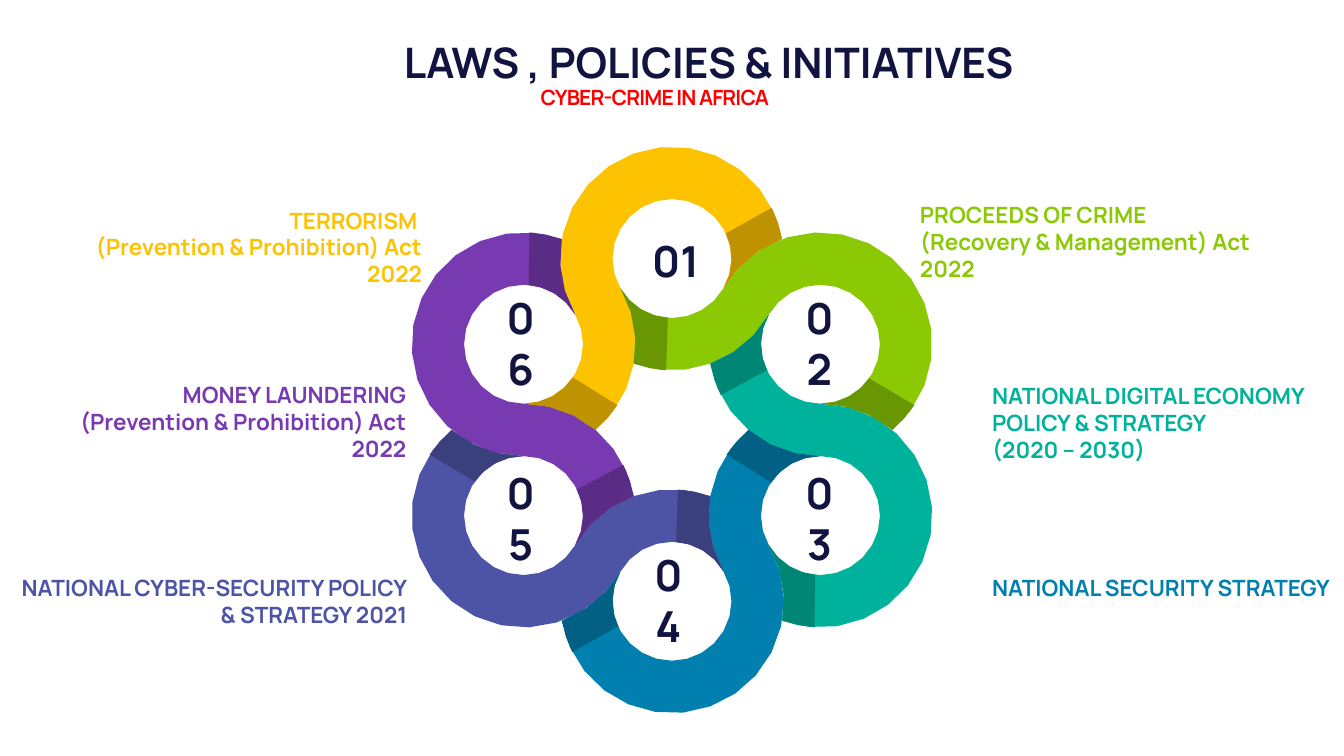
import math
import pptx
import pptx.util
from pptx.dml.color import RGBColor
from pptx.enum.text import MSO_ANCHOR, MSO_AUTO_SIZE, PP_ALIGN

WIDTH, HEIGHT = 26.66, 15
FONT = "Manrope"
NAVY = RGBColor(0x11, 0x13, 0x40)
RED = RGBColor(0xFF, 0x00, 0x00)
YELLOW = RGBColor(0xFD, 0xC3, 0x00)
GREEN = RGBColor(0x8B, 0xC9, 0x04)
TEAL = RGBColor(0x00, 0xB2, 0x9C)
BLUE = RGBColor(0x01, 0x80, 0xB0)
INDIGO = RGBColor(0x4D, 0x54, 0xA6)
PURPLE = RGBColor(0x78, 0x3A, 0xB1)

HEADING = "LAWS , POLICIES & INITIATIVES"
SUBHEADING = "CYBER-CRIME IN AFRICA"

# Clockwise from the top: number, colour, offset of the number from its ring centre
RINGS = [
    ("01", YELLOW, (0.07, 0.04)),
    ("02", GREEN, (-0.02, -0.02)),
    ("03", TEAL, (-0.02, 0.05)),
    ("04", BLUE, (-0.07, -0.02)),
    ("05", INDIGO, (-0.06, 0.05)),
    ("06", PURPLE, (-0.06, -0.02)),
]

# Lines, colour, alignment, box (left, top, width, height)
LAWS = [
    (["TERRORISM ", "(Prevention & Prohibition) Act 2022"],
     YELLOW, PP_ALIGN.RIGHT, (0.63, 4.05, 7.84, 1.18)),
    (["MONEY LAUNDERING", "(Prevention & Prohibition) Act 2022"],
     PURPLE, PP_ALIGN.RIGHT, (0.32, 7.51, 7.84, 1.18)),
    (["NATIONAL CYBER-SECURITY POLICY", "& STRATEGY 2021"],
     INDIGO, PP_ALIGN.RIGHT, (0.26, 11.35, 7.92, 1.18)),
    (["PROCEEDS OF CRIME", "(Recovery & Management) Act 2022"],
     GREEN, PP_ALIGN.LEFT, (18.15, 3.94, 7.9, 1.18)),
    (["NATIONAL DIGITAL ECONOMY", "POLICY & STRATEGY", "(2020 – 2030)"],
     TEAL, PP_ALIGN.LEFT, (19.58, 7.53, 6.76, 1.72)),
    (["NATIONAL SECURITY STRATEGY"],
     BLUE, PP_ALIGN.LEFT, (19.58, 11.35, 7.04, 0.64)),
]

# Six rings on a hexagon; neighbours touch where outer meets inner radius
CENTRE = (WIDTH / 2, 8.53)
OUTER, INNER = 2.22, 1.18
SPACING = OUTER + INNER
NUMBER_BOX = (1.19, 1.13)
ARC_PIECE = 15  # degrees covered by one straight piece of an arc
JOINT = 0.1     # arc ends closer than this share one point

# Arcs of the first band: ring (steps clockwise from the top), radius, from and to degrees
START_EDGE = (1, OUTER, -150, -110)
END_EDGE = (-2, OUTER, -90, -50)
BAND = [
    (0, OUTER, -10, -210), (-1, INNER, -30, 90), END_EDGE,
    (-1, OUTER, 50, -30), (0, INNER, -210, 30), START_EDGE,
]
START_SHADE = [(0, OUTER, -10, -27), (0, INNER, -25, 30), START_EDGE]
END_SHADE = [(-1, INNER, 34, 90), END_EDGE, (-1, OUTER, 50, 33)]


def polar(origin, radius, degrees):
    angle = math.radians(degrees)
    return origin[0] + radius * math.cos(angle), origin[1] + radius * math.sin(angle)


def ring_centre(step):
    return polar(CENTRE, SPACING, 60 * step - 90)


def darker(colour):
    return RGBColor(*(math.floor(0.75 * part + 0.5) for part in colour))


def draw_arcs(arcs, step, colour):
    """Outline the arcs, turned by whole hexagon steps, and fill them."""
    points = []
    for ring, radius, first, last in arcs:
        pieces = math.ceil(abs(last - first) / ARC_PIECE)
        for i in range(pieces + 1):
            degrees = first + (last - first) * i / pieces + 60 * step
            point = polar(ring_centre(ring + step), radius, degrees)
            if not points or math.dist(point, points[-1]) > JOINT:
                points.append(point)
    corners = [tuple(map(pptx.util.Inches, point)) for point in points]
    builder = slide.shapes.build_freeform(*corners[0], scale=1.0)
    builder.add_line_segments(corners[1:], close=True)
    outline = builder.convert_to_shape()
    outline.shadow.inherit = False
    outline.fill.solid()
    outline.fill.fore_color.rgb = colour
    outline.line.fill.background()


def write(holder, box, lines, size, colour, align, anchor=MSO_ANCHOR.TOP):
    for side, length in zip(("left", "top", "width", "height"), box):
        setattr(holder, side, pptx.util.Inches(length))
    frame = holder.text_frame
    frame.text = "\n".join(lines)
    layout = {"word_wrap": True, "auto_size": MSO_AUTO_SIZE.SHAPE_TO_FIT_TEXT,
              "vertical_anchor": anchor}
    for name, value in layout.items():
        setattr(frame, name, value)
    style = {"name": FONT, "size": pptx.util.Pt(size), "bold": True}
    for paragraph in frame.paragraphs:
        paragraph.alignment = align
        for run in paragraph.runs:
            for name, value in style.items():
                setattr(run.font, name, value)
            run.font.color.rgb = colour
    return frame.paragraphs[0]


def new_box():
    return slide.shapes.add_textbox(0, 0, 0, 0)


deck = pptx.Presentation()
deck.slide_width = pptx.util.Inches(WIDTH)
deck.slide_height = pptx.util.Inches(HEIGHT)
slide = deck.slides.add_slide(deck.slide_layouts[5])

# Heading and subheading
write(slide.shapes.title, (7.68, 0.67, 12.76, 1.11), [HEADING], 60, NAVY, PP_ALIGN.CENTER)
subheading = write(new_box(), (5.51, 1.55, 14.96, 0.66), [SUBHEADING], 30, RED,
                   PP_ALIGN.CENTER)
subheading.line_spacing = pptx.util.Pt(42)
subheading.runs[0].font._element.set("spc", "-120")

# Interlocking bands, then their shaded ends
for step, (number, colour, offset) in enumerate(RINGS):
    draw_arcs(BAND, step, colour)
for step, (number, colour, offset) in enumerate(RINGS):
    for shade in (START_SHADE, END_SHADE):
        draw_arcs(shade, step, darker(colour))

# Numbers inside the rings
for step, (number, colour, offset) in enumerate(RINGS):
    left, top = (middle + shift - length / 2 for middle, shift, length
                 in zip(ring_centre(step), offset, NUMBER_BOX))
    write(new_box(), (left, top, *NUMBER_BOX), [number], 61, NAVY,
          PP_ALIGN.CENTER, MSO_ANCHOR.MIDDLE)

# Laws and policies around the rings
for lines, colour, align, box in LAWS:
    write(new_box(), box, lines, 32, colour, align)

deck.save("out.pptx")
